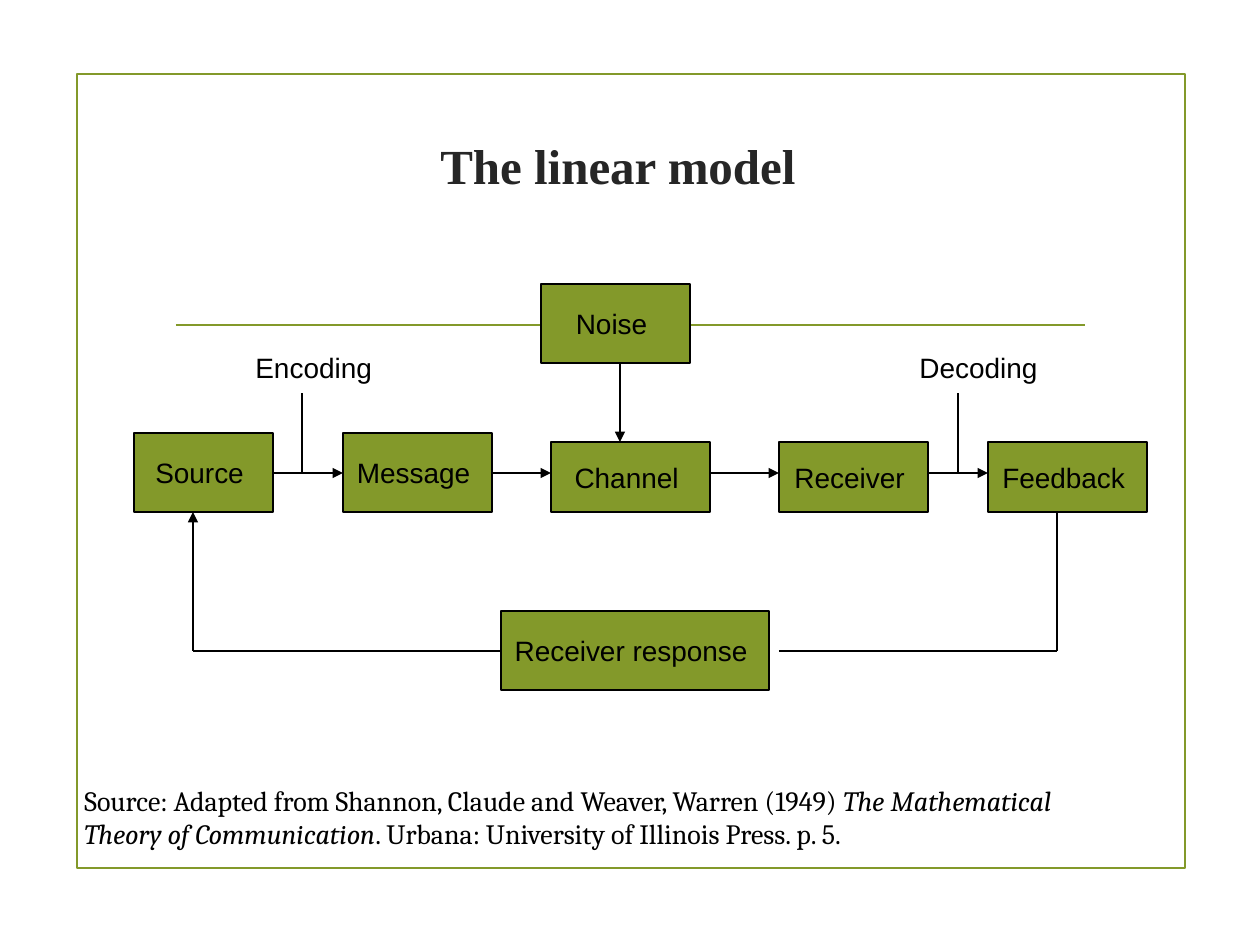
from lxml.etree import SubElement
from pptx import Presentation
from pptx.dml.color import RGBColor
from pptx.enum.shapes import MSO_CONNECTOR as CONN, MSO_SHAPE as SHAPE
from pptx.enum.text import MSO_ANCHOR as ANCHOR, MSO_AUTO_SIZE as FIT, PP_ALIGN as ALIGN
from pptx.oxml.ns import qn
from pptx.util import Pt

PX = 914400 / 126
COLORS = {"olive": "83992A", "black": "000000", "title": "262626"}

FRAME = (77, 74, 1108, 794)
RULE = (176, 325, 1085, 325)
TITLE = ("The linear model", (134, 86, 968, 158))

# Chain from left to right: text, left, top, width; all share one bottom edge
CHAIN_BOTTOM, FLOW_Y, LOOP_Y = 512, 473, 651
CHAIN = [
    ("Source ", 134, 433, 139),
    ("Message ", 343, 433, 149),
    ("Channel ", 551, 442, 159),
    ("Receiver ", 779, 442, 149),
    ("Feedback ", 988, 442, 159),
]
NOISE = ("Noise ", (541, 284, 149, 79))
RESPONSE = ("Receiver response ", (501, 611, 268, 79))
SOURCE_X, NOISE_X, FEEDBACK_X, RESPONSE_END = 193, 620, 1057, 779

# Text, left, x of the stem down to the flow
LABELS = [("Encoding", 243, 302), ("Decoding", 907, 958)]
LABEL_TOP, LABEL_WIDTH, LABEL_HEIGHT = 344, 144, 47
STEM_TOP = 393

# Lines of (text, italic) runs
CITATION_BOX = (72, 777, 1168, 81)
CITATION = [
    [("Source: Adapted from Shannon, Claude and Weaver, Warren (1949) ", False),
     ("The Mathematical", True)],
    [("Theory of Communication", True),
     (". Urbana: University of Illinois Press. p. 5.", False)],
]


def emu(values):
    return [round(v * PX) for v in values]


def rgb(name):
    return RGBColor.from_string(COLORS[name])


def style(run, size=16, font="Arial", color="black", bold=None, italic=None):
    f = run.font
    f.size, f.name, f.bold, f.italic = Pt(size), font, bold, italic
    f.color.rgb = rgb(color)


def add_rect(slide, box, fill, line, width):
    sp = slide.shapes.add_shape(SHAPE.RECTANGLE, *emu(box))
    sp.shadow.inherit = False
    if fill:
        sp.fill.solid()
        sp.fill.fore_color.rgb = rgb(fill)
    else:
        sp.fill.background()
    sp.line.color.rgb = rgb(line)
    sp.line.width = Pt(width)
    return sp


def add_node(slide, text, box):
    tf = add_rect(slide, box, "olive", "black", 0.75).text_frame
    tf.word_wrap = False
    tf.vertical_anchor = ANCHOR.MIDDLE
    tf.text = text
    p = tf.paragraphs[0]
    p.alignment = ALIGN.CENTER
    style(p.runs[0])


def add_line(slide, ends, color="black", width=0.75, arrow=False):
    cx = slide.shapes.add_connector(CONN.STRAIGHT, *emu(ends))
    cx.line.color.rgb = rgb(color)
    cx.line.width = Pt(width)
    if arrow:
        SubElement(cx.line._get_or_add_ln(), qn("a:tailEnd"), type="triangle")
    SubElement(cx._element.spPr, qn("a:effectLst"))


def add_text(slide, box, lines, **font):
    """Add a growing text box whose lines are lists of (text, italic) runs."""
    tf = slide.shapes.add_textbox(*emu(box)).text_frame
    tf.word_wrap = False
    tf.auto_size = FIT.SHAPE_TO_FIT_TEXT
    for i, line in enumerate(lines):
        p = tf.add_paragraph() if i else tf.paragraphs[0]
        for text, italic in line:
            r = p.add_run()
            r.text = text
            style(r, italic=italic, **font)
    return tf


def main():
    prs = Presentation()
    prs.slide_width, prs.slide_height = emu((1260, 945))
    s = prs.slides.add_slide(prs.slide_layouts[6])

    add_rect(s, FRAME, None, "olive", 1.25)
    add_line(s, RULE, "olive", 1.25)

    text, box = TITLE
    tf = add_text(s, box, [[(text, False)]], size=28, font="Times New Roman",
                  color="title", bold=True)
    tf.word_wrap = True
    tf.auto_size = FIT.NONE
    tf.vertical_anchor = ANCHOR.MIDDLE
    tf.paragraphs[0].alignment = ALIGN.CENTER

    for text, left, top, width in CHAIN:
        add_node(s, text, (left, top, width, CHAIN_BOTTOM - top))
    for (_, left, _, width), (_, next_left, _, _) in zip(CHAIN, CHAIN[1:]):
        add_line(s, (left + width, FLOW_Y, next_left, FLOW_Y), arrow=True)

    add_node(s, *NOISE)
    add_node(s, *RESPONSE)
    _, (_, noise_top, _, noise_height) = NOISE
    channel_top = CHAIN[2][2]
    add_line(s, (NOISE_X, noise_top + noise_height, NOISE_X, channel_top), arrow=True)

    for text, left, stem_x in LABELS:
        add_text(s, (left, LABEL_TOP, LABEL_WIDTH, LABEL_HEIGHT), [[(text, False)]])
        add_line(s, (stem_x, FLOW_Y, stem_x, STEM_TOP))

    # Feedback loop through the receiver response back to the source
    add_line(s, (FEEDBACK_X, CHAIN_BOTTOM, FEEDBACK_X, LOOP_Y))
    add_line(s, (RESPONSE_END, LOOP_Y, FEEDBACK_X, LOOP_Y))
    add_line(s, (SOURCE_X, LOOP_Y, RESPONSE[1][0], LOOP_Y))
    add_line(s, (SOURCE_X, LOOP_Y, SOURCE_X, CHAIN_BOTTOM), arrow=True)

    add_text(s, CITATION_BOX, CITATION, font="Cambria")
    prs.save("out.pptx")


if __name__ == "__main__":
    main()
